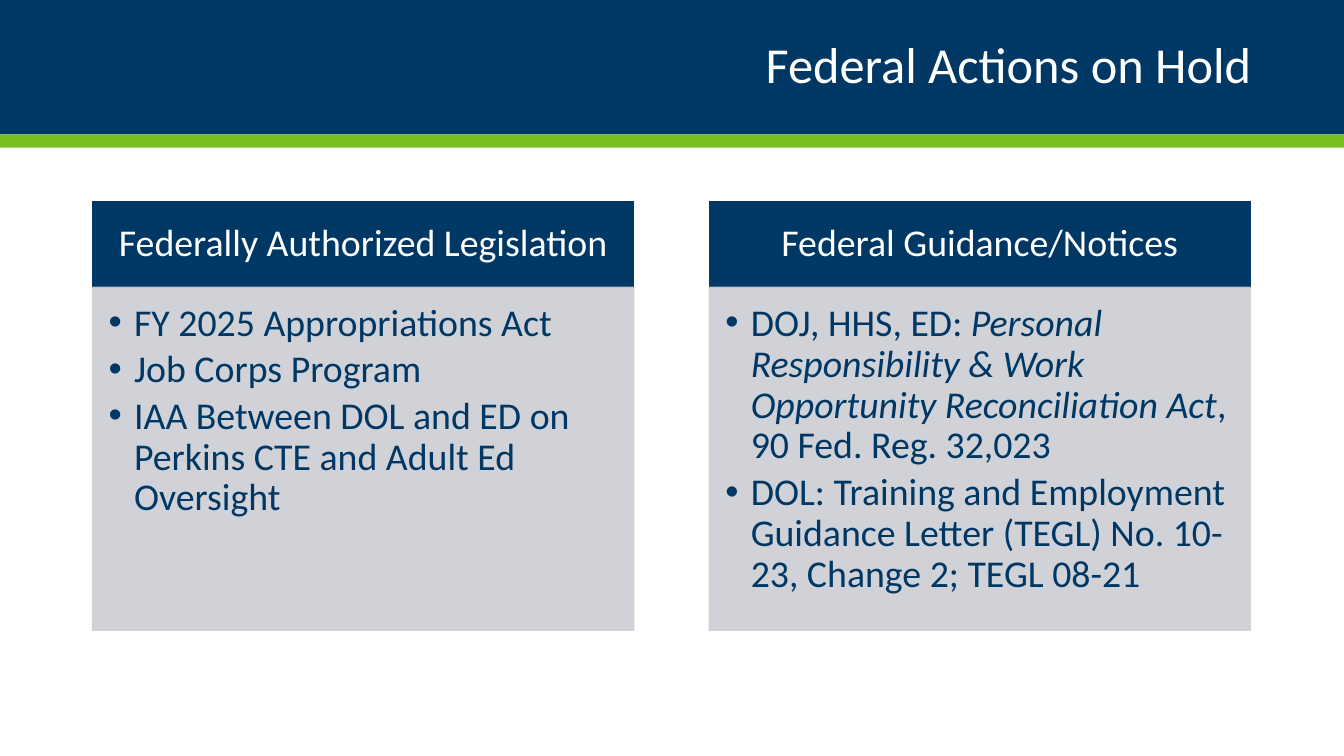
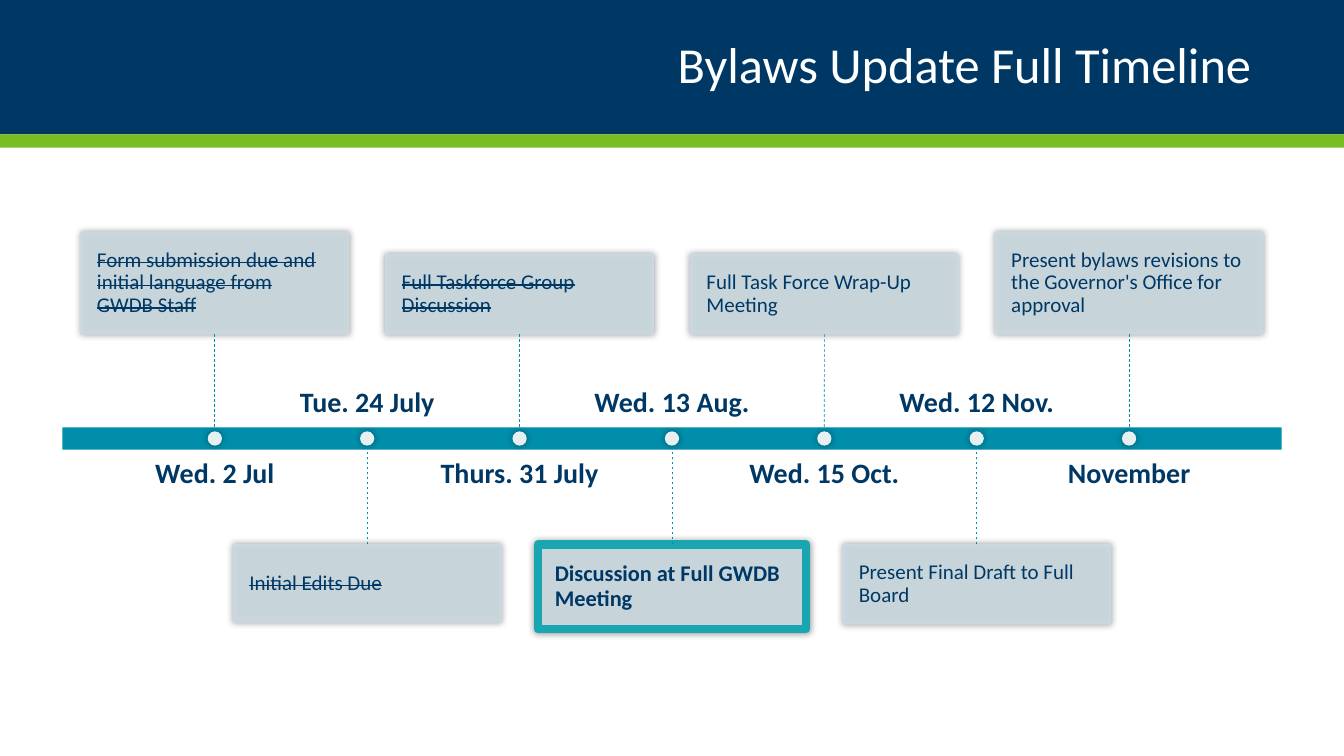
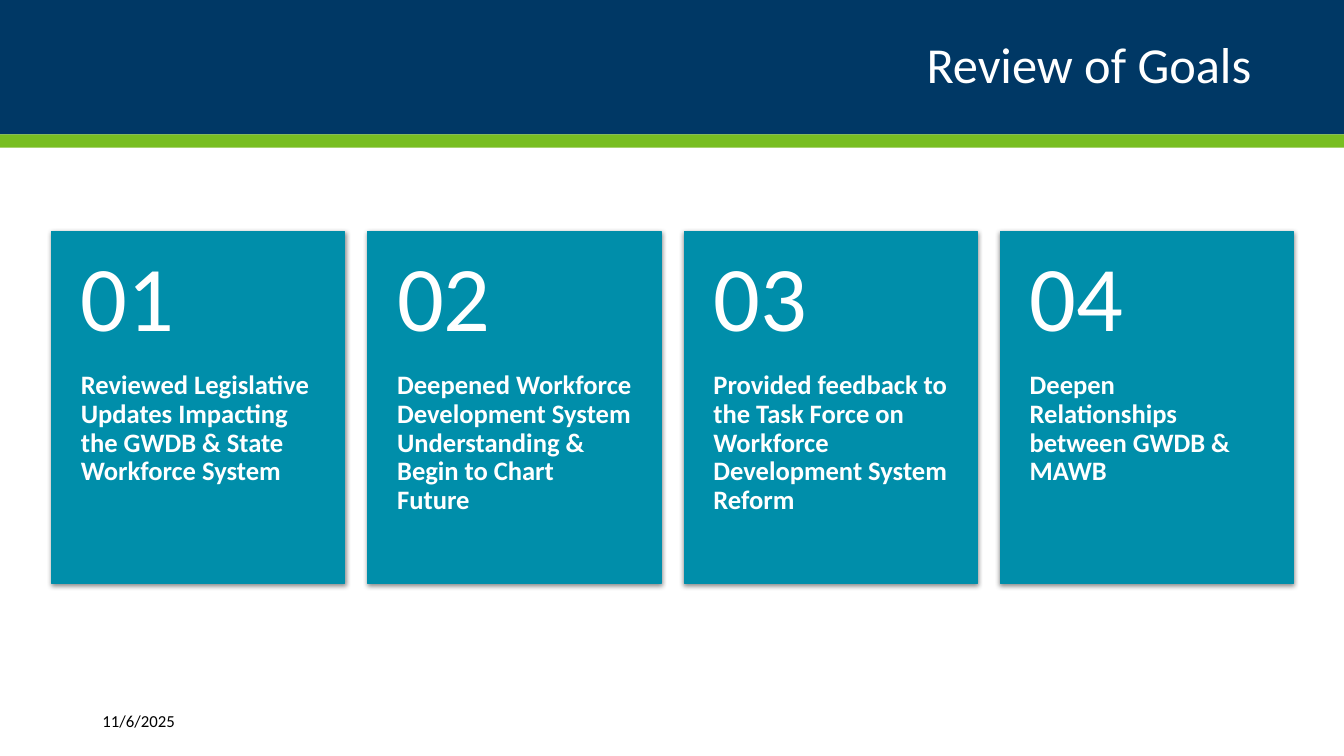
from lxml import etree
from pptx import Presentation
from pptx.dml.color import RGBColor
from pptx.enum.dml import MSO_LINE
from pptx.enum.shapes import MSO_CONNECTOR, MSO_SHAPE
from pptx.enum.text import MSO_ANCHOR, MSO_AUTO_SIZE, PP_ALIGN
from pptx.oxml.ns import qn
from pptx.util import Cm, Pt

RECT, OVAL = MSO_SHAPE.RECTANGLE, MSO_SHAPE.OVAL
STRAIGHT, DASH = MSO_CONNECTOR.STRAIGHT, MSO_LINE.DASH
LEFT, CENTER, RIGHT = PP_ALIGN.LEFT, PP_ALIGN.CENTER, PP_ALIGN.RIGHT
TOP, MIDDLE, BOTTOM = MSO_ANCHOR.TOP, MSO_ANCHOR.MIDDLE, MSO_ANCHOR.BOTTOM

FONT = "Calibri"
NAVY = RGBColor(0x00, 0x38, 0x65)
GREEN = RGBColor(0x78, 0xBE, 0x21)
TEAL = RGBColor(0x00, 0x8E, 0xAA)
AQUA = RGBColor(0x1A, 0xA6, 0xB0)
GRAY = RGBColor(0xCC, 0xCE, 0xD3)
PALE_BLUE = RGBColor(0xCC, 0xDB, 0xE2)
WHITE = RGBColor(0xFF, 0xFF, 0xFF)
BLACK = RGBColor(0x00, 0x00, 0x00)

GLOW = (40, 5, 0, 0)
DROP = (45, 3.5, 1.1, 90)


def paint(shape, fill, line=None, width=0.75, opacity=100, shadow=None):
    shape.fill.solid()
    shape.fill.fore_color.rgb = fill
    if line is None:
        shape.line.fill.background()
    else:
        shape.line.color.rgb = line
        shape.line.width = Pt(width)
    properties = shape.element.spPr
    if opacity < 100:
        for color in properties.iter(qn("a:srgbClr")):
            if color.get("val") == str(fill):
                etree.SubElement(color, qn("a:alpha"), val=str(opacity * 1000))
    shape.shadow.inherit = False
    if shadow:
        strength, blur, distance, angle = shadow
        outer = etree.SubElement(
            properties.find(qn("a:effectLst")), qn("a:outerShdw"),
            blurRad=str(Pt(blur)), dist=str(Pt(distance)), dir=str(angle * 60000),
            algn="ctr", rotWithShape="0")
        black = etree.SubElement(outer, qn("a:srgbClr"), val="000000")
        etree.SubElement(black, qn("a:alpha"), val=str(strength * 1000))


def format_text(shape, size, color, bold=False, align=LEFT, anchor=MIDDLE,
                margins=(0, 0, 0, 0), spacing=0.9):
    frame = shape.text_frame
    frame.word_wrap = True
    frame.auto_size = MSO_AUTO_SIZE.NONE
    frame.vertical_anchor = anchor
    (frame.margin_left, frame.margin_top,
     frame.margin_right, frame.margin_bottom) = [Cm(m) for m in margins]
    for paragraph in frame.paragraphs:
        paragraph.alignment = align
        paragraph.line_spacing = spacing
        paragraph.space_before = Pt(0)
        for run in paragraph.runs:
            run.font.name = FONT
            run.font.size = Pt(size)
            run.font.bold = bold
            run.font.color.rgb = color


prs = Presentation()
prs.slide_width, prs.slide_height = Cm(33.87), Cm(19.05)
comparison, title_only = prs.slide_layouts[4], prs.slide_layouts[5]
BAND_HEIGHT = 3.39

slides = []
for layout, heading in [
    (comparison, "Federal Actions on Hold"),
    (title_only, "Bylaws Update Full Timeline"),
    (title_only, "Review of Goals"),
]:
    slide = prs.slides.add_slide(layout)
    title = slide.shapes.title
    title.left, title.top, title.width, title.height = Cm(2.33), Cm(0), Cm(29.21), Cm(BAND_HEIGHT)
    title.text_frame.text = heading
    format_text(title, 36, WHITE, align=RIGHT, margins=(0, 0.13, 0, 0.13))
    slides.append(slide)
actions, timeline, goals = slides

bands = []
for top, height, color in [(0, BAND_HEIGHT, NAVY), (BAND_HEIGHT, 0.33, GREEN)]:
    band = actions.shapes.add_shape(RECT, Cm(0), Cm(top), prs.slide_width, Cm(height))
    paint(band, color)
    bands.append(band)
for position, band in enumerate(bands, 2):
    prs.slide_master.shapes.element.insert(position, band.element)

panels = [
    ("Federally Authorized Legislation", [
        ["FY 2025 Appropriations Act"],
        ["Job Corps Program"],
        ["IAA Between DOL and ED on Perkins CTE and Adult Ed Oversight"],
    ]),
    ("Federal Guidance/Notices", [
        ["DOJ, HHS, ED: ",
         "Personal Responsibility & Work Opportunity Reconciliation Act",
         ", 90 Fed. Reg. 32,023"],
        ["DOL: Training and Employment Guidance Letter (TEGL) No. 10-23, Change 2; TEGL 08-21"],
    ]),
]
for column, (heading, entries) in enumerate(panels):
    header = actions.placeholders[1 + 2 * column]
    listing = actions.placeholders[2 + 2 * column]
    for part, top, height in [(header, 5.08, 2.16), (listing, 7.24, 8.64)]:
        part.left, part.top = Cm(2.33 + 15.54 * column), Cm(top)
        part.width, part.height = Cm(13.64), Cm(height)
    paint(header, NAVY, NAVY, 0.85)
    paint(listing, GRAY, GRAY, 0.85, opacity=90)
    header.text_frame.text = heading
    format_text(header, 27, WHITE, align=CENTER, margins=(0.53, 0.3, 0.53, 0.3))

    listing.text_frame.text = "\n".join(entry[0] for entry in entries)
    for paragraph, entry in zip(listing.text_frame.paragraphs, entries):
        for text in entry[1:]:
            paragraph.add_run().text = text
        for citation in paragraph.runs[1::2]:
            citation.font.italic = True
        paragraph.space_after = Pt(4)
    format_text(listing, 27, NAVY, anchor=TOP, margins=(0.41, 0.41, 0.53, 0.61))
    for indents in listing.element.iter(qn("a:pPr")):
        indents.set("marL", str(Cm(0.64)))
        indents.set("indent", str(Cm(-0.64)))

BAR_LEFT, BAR_TOP, BAR_WIDTH, BAR_HEIGHT = 1.57, 10.77, 30.73, 0.56
STEP, EVENT_WIDTH, DATE_WIDTH, DATE_HEIGHT, DOT = 3.84, 6.76, 6.15, 1.57, 0.36
UPPER_EDGE, LOWER_EDGE = 8.42, 13.72
bar = timeline.shapes.add_shape(RECT, Cm(BAR_LEFT), Cm(BAR_TOP), Cm(BAR_WIDTH), Cm(BAR_HEIGHT))
paint(bar, TEAL)

events = [
    ("Wed. 2 Jul", "Form submission due and initial language from GWDB Staff", 2.57, "done"),
    ("Tue. 24 July", "Initial Edits Due", 1.96, "done"),
    ("Thurs. 31 July", "Full Taskforce Group Discussion", 2.01, "done"),
    ("Wed. 13 Aug.", "Discussion at Full GWDB Meeting", 2.13, "current"),
    ("Wed. 15 Oct.", "Full Task Force Wrap-Up Meeting", 2.01, "planned"),
    ("Wed. 12 Nov.", "Present Final Draft to Full Board", 2.01, "planned"),
    ("November", "Present bylaws revisions to the Governor's Office for approval", 2.57, "planned"),
]
middle = len(events) // 2
for index, (day, task, height, status) in enumerate(events):
    center = BAR_LEFT + BAR_WIDTH / 2 + (index - middle) * STEP
    above = index % 2 == 0
    current = status == "current"

    event = timeline.shapes.add_shape(
        RECT, Cm(center - EVENT_WIDTH / 2), Cm(UPPER_EDGE - height if above else LOWER_EDGE),
        Cm(EVENT_WIDTH), Cm(height))
    paint(event, PALE_BLUE, AQUA if current else PALE_BLUE, 6 if current else 0.75,
          opacity=90, shadow=GLOW)
    event.text_frame.text = task
    format_text(event, 16 if current else 15, NAVY, bold=current,
                margins=[0.43 if current else 0.41] * 4)
    if status == "done":
        for strike in event.element.iter(qn("a:rPr")):
            strike.set("strike", "sngStrike")

    bar_edge = BAR_TOP if above else BAR_TOP + BAR_HEIGHT
    stem = timeline.shapes.add_connector(
        STRAIGHT, Cm(center), Cm(UPPER_EDGE if above else LOWER_EDGE), Cm(center), Cm(bar_edge))
    stem.begin_connect(event, 2 if above else 0)
    if index == middle:
        stem.end_connect(bar, 0 if above else 2)
    stem.line.color.rgb = TEAL
    stem.line.width = Pt(0.5)
    stem.line.dash_style = DASH
    etree.SubElement(stem.element.spPr, qn("a:effectLst"))

    date = timeline.shapes.add_textbox(
        Cm(center - DATE_WIDTH / 2), Cm(11.58 if above else 8.97), Cm(DATE_WIDTH), Cm(DATE_HEIGHT))
    date.text_frame.text = day
    format_text(date, 20, NAVY, bold=True, align=CENTER, anchor=TOP if above else BOTTOM)

    dot = timeline.shapes.add_shape(
        OVAL, Cm(center - DOT / 2), Cm(BAR_TOP + (BAR_HEIGHT - DOT) / 2), Cm(DOT), Cm(DOT))
    paint(dot, WHITE, opacity=90, shadow=GLOW)

CARD_TOP, CARD_WIDTH, NUMBER_HEIGHT = 5.84, 7.39, 3.53
achievements = [
    "Reviewed Legislative Updates Impacting the GWDB & State Workforce System",
    "Deepened Workforce Development System Understanding & Begin to Chart Future",
    "Provided feedback to the Task Force on Workforce Development System Reform",
    "Deepen Relationships between GWDB & MAWB",
]
for index, achievement in enumerate(achievements):
    left = Cm(1.3 + 7.97 * index)
    card = goals.shapes.add_shape(RECT, left, Cm(CARD_TOP), Cm(CARD_WIDTH), Cm(8.86))
    paint(card, TEAL, TEAL, shadow=DROP)
    card.text_frame.text = achievement
    format_text(card, 19, WHITE, bold=True, anchor=TOP, margins=(0.74, NUMBER_HEIGHT, 0.74, 0.91))

    number = goals.shapes.add_textbox(left, Cm(CARD_TOP), Cm(CARD_WIDTH), Cm(NUMBER_HEIGHT))
    number.text_frame.text = f"{index + 1:02}"
    format_text(number, 66, WHITE, margins=(0.74, 0.46, 0.74, 0.46))

meeting_date = goals.shapes.add_textbox(Cm(2.33), Cm(17.65), Cm(3.78), Cm(1.02))
meeting_date.text_frame.text = "11/6/2025"
format_text(meeting_date, 12, BLACK, margins=(0.25, 0.13, 0.25, 0.13), spacing=1.0)

prs.save("out.pptx")
